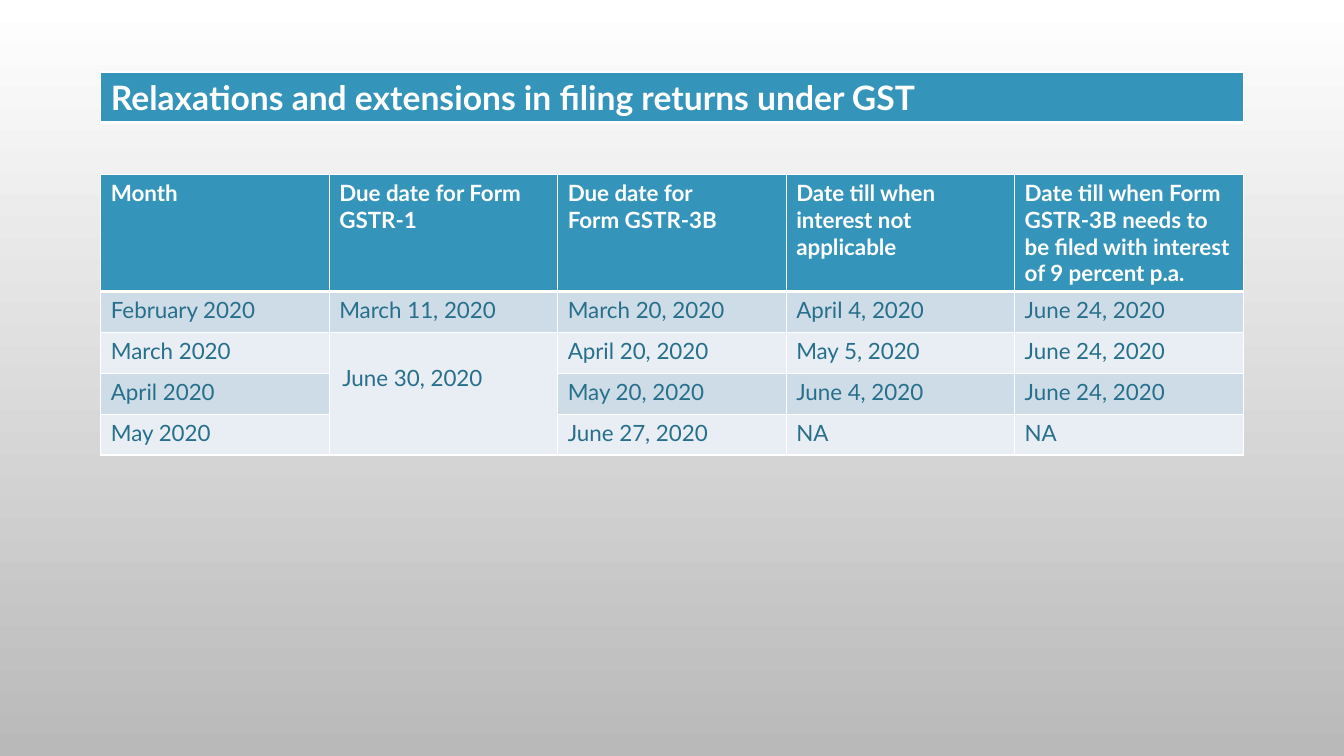
from dataclasses import dataclass

from lxml.etree import SubElement
from pptx import Presentation
from pptx.dml.color import RGBColor as Rgb
from pptx.enum.text import PP_ALIGN as Align
from pptx.oxml.ns import qn
from pptx.util import Pt


@dataclass(frozen=True)
class Theme:
    """Colours, type sizes and line widths of the slide."""
    font: str = "Lato"
    accent: str = "3494BA"
    body_text: str = "276F8B"
    white: str = "FFFFFF"
    bands: tuple = ("CEDCE7", "E8EEF3")
    backdrop: tuple = ("FFFFFF", "B9B9B9")
    title_size: int = 24
    table_size: int = 16
    thin: int = 1
    thick: int = 3


THEME = Theme()
LEFT, WIDTH = 72, 816
TITLE_TOP, TITLE_HEIGHT = 51.4, 36
TABLE_TOP, HEADER_HEIGHT, ROW_HEIGHT = 124.6, 83.6, 29.2

TITLE = "Relaxations and extensions in filing returns under GST"
HEADERS = [
    "Month",
    "Due date for Form\nGSTR-1",
    "Due date for\nForm GSTR-3B",
    "Date till when interest not applicable",
    "Date till when Form GSTR-3B needs to be filed with interest of 9 percent p.a.",
]
DUE_DATES = [
    ["February 2020", "March 11, 2020", "March 20, 2020", "April 4, 2020", "June 24, 2020"],
    ["March 2020", "June 30, 2020", "April 20, 2020", "May 5, 2020", "June 24, 2020"],
    ["April 2020", "", "May 20, 2020", "June 4, 2020", "June 24, 2020"],
    ["May 2020", "", "June 27, 2020", "NA", "NA"],
]


def paint(fill, colour):
    """Give a fill one solid colour."""
    fill.solid()
    fill.fore_color.rgb = Rgb.from_string(colour)


def write(frame, text, size, colour, bold):
    """Set text and format every paragraph and run."""
    frame.text = text
    for paragraph in frame.paragraphs:
        for font in [paragraph.font, *(run.font for run in paragraph.runs)]:
            font.name, font.size, font.bold = THEME.font, Pt(size), bold
            font.color.rgb = Rgb.from_string(colour)


def add_borders(cell, top, bottom):
    """Draw white borders round a cell, with its own top and bottom widths."""
    properties = cell._tc.get_or_add_tcPr()
    widths = {"a:lnL": THEME.thin, "a:lnR": THEME.thin, "a:lnT": top, "a:lnB": bottom}
    for side, width in widths.items():
        line = SubElement(properties, qn(side), w=str(Pt(width)))
        SubElement(SubElement(line, qn("a:solidFill")), qn("a:srgbClr"), val=THEME.white)


def fill_backdrop(slide):
    """Shade the slide from top to bottom."""
    fill = slide.background.fill
    fill.gradient()
    fill.gradient_angle = 270
    for stop, colour in zip(fill.gradient_stops, THEME.backdrop):
        stop.color.rgb = Rgb.from_string(colour)


def add_banded_table(slide, rows, top, header_height, header_size):
    """Add a table with an accent header row above banded body rows."""
    height = header_height + ROW_HEIGHT * (len(rows) - 1)
    table = slide.shapes.add_table(
        len(rows), len(rows[0]), Pt(LEFT), Pt(top), Pt(WIDTH), Pt(height)
    ).table
    for column in table.columns:
        column.width = Pt(WIDTH / len(rows[0]))
    for r, texts in enumerate(rows):
        header = r == 0
        table.rows[r].height = Pt(header_height if header else ROW_HEIGHT)
        for c, text in enumerate(texts):
            cell = table.cell(r, c)
            add_borders(
                cell,
                top=THEME.thick if r == 1 else THEME.thin,
                bottom=THEME.thick if header else THEME.thin,
            )
            paint(cell.fill, THEME.accent if header else THEME.bands[(r - 1) % 2])
            size = header_size if header else THEME.table_size
            colour = THEME.white if header else THEME.body_text
            write(cell.text_frame, text, size, colour, header)
    return table


def share_date(table):
    """Merge the cells of the date that three months share and place its text."""
    shared_date = table.cell(2, 1)
    shared_date.merge(table.cell(4, 1))
    shared_date.margin_top, shared_date.margin_right = Pt(22.8), Pt(51.6)
    shared_date.text_frame.paragraphs[0].alignment = Align.CENTER


def main():
    """Build and save the slide."""
    deck = Presentation()
    deck.slide_width, deck.slide_height = Pt(960), Pt(540)
    slide = deck.slides.add_slide(deck.slide_layouts[6])
    fill_backdrop(slide)
    due_dates = add_banded_table(
        slide, [HEADERS, *DUE_DATES], TABLE_TOP, HEADER_HEIGHT, THEME.table_size
    )
    share_date(due_dates)
    add_banded_table(slide, [[TITLE]], TITLE_TOP, TITLE_HEIGHT, THEME.title_size)
    deck.save("out.pptx")


if __name__ == "__main__":
    main()
